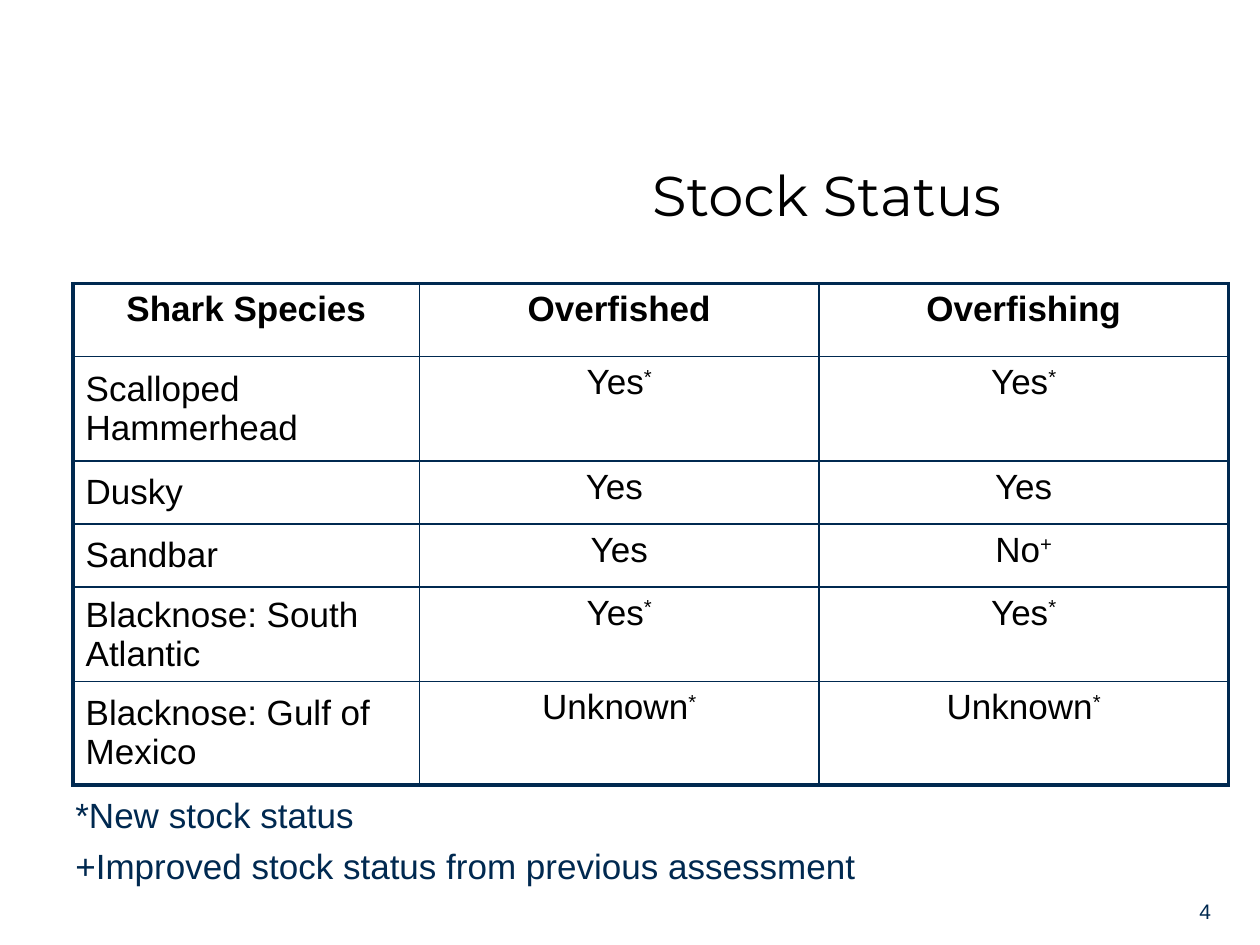
import dataclasses
import lxml.etree
import pptx
import pptx.dml.color
import pptx.enum.text
import pptx.oxml.ns
import pptx.util

Inches, Pt = pptx.util.Inches, pptx.util.Pt
Align, Anchor = pptx.enum.text.PP_ALIGN, pptx.enum.text.MSO_ANCHOR
qn = pptx.oxml.ns.qn


@dataclasses.dataclass(frozen=True)
class Theme:
    ink: str = "000000"
    navy: str = "002950"
    head: str = "Montserrat"
    body: str = "Arial"
    big: int = 32
    base: int = 20
    small: int = 12
    thick: float = 2.25
    thin: float = 1
    gap: int = 5


THEME = Theme()
COLS = [2.75, 3.17, 3.25]
HEIGHTS = [0.58, 0.83, 0.5, 0.5, 0.75, 0.82]
MARKS = "*+"
ROWS = [
    ["Shark Species", "Overfished", "Overfishing"],
    ["Scalloped Hammerhead", "Yes*", "Yes*"],
    ["Dusky", "Yes ", "Yes"],
    ["Sandbar", "Yes", "No+"],
    ["Blacknose: South Atlantic", "Yes*", "Yes*"],
    ["Blacknose: Gulf of Mexico", "Unknown*", "Unknown*"],
]
NOTES = ["*New stock status", "+Improved stock status from previous assessment"]


def style(run, size, color, face=THEME.body, bold=False):
    font = run.font
    font.name, font.size, font.bold = face, Pt(size), bold
    font.color.rgb = pptx.dml.color.RGBColor.from_string(color)


def title(slide, box, text):
    shape = slide.shapes.title
    shape.left, shape.top, shape.width, shape.height = map(Inches, box)
    frame = shape.text_frame
    frame.text = text
    frame.vertical_anchor = Anchor.MIDDLE
    para = frame.paragraphs[0]
    para.alignment = Align.CENTER
    style(para.runs[0], THEME.big, THEME.ink, THEME.head)


def lines(slide, box, texts, size):
    frame = slide.shapes.add_textbox(*map(Inches, box)).text_frame
    frame.word_wrap = True
    frame.text = "\n".join(texts)
    for i, para in enumerate(frame.paragraphs):
        if i:
            para.space_before = Pt(THEME.gap)
        style(para.runs[0], size, THEME.navy)


def border(cell, sides):
    # Borders come before the fill in the cell properties
    props = cell._tc.get_or_add_tcPr()
    for i, (side, width) in enumerate(sides.items()):
        line = lxml.etree.Element(qn("a:ln" + side), w=str(Pt(width)))
        fill = lxml.etree.SubElement(line, qn("a:solidFill"))
        lxml.etree.SubElement(fill, qn("a:srgbClr"), val=THEME.navy)
        props.insert(i, line)


def fill(cell, text, head, name):
    cell.fill.background()
    cell.vertical_anchor = Anchor.MIDDLE if name else Anchor.TOP
    para = cell.text_frame.paragraphs[0]
    para.alignment = Align.LEFT if name else Align.CENTER
    word = text.rstrip(MARKS)
    para.text = word
    mark = text[len(word):]
    if mark:
        run = para.add_run()
        run.text = mark
        run.font._element.set("baseline", "30000")
    for run in para.runs:
        style(run, THEME.base, THEME.ink, bold=head)


def status(slide, box, rows):
    table = slide.shapes.add_table(len(rows), len(COLS), *map(Inches, box)).table
    table.first_row = table.horz_banding = False
    for col, width in zip(table.columns, COLS):
        col.width = Inches(width)
    for row, height in zip(table.rows, HEIGHTS):
        row.height = Inches(height)
    for r, row in enumerate(rows):
        for c, text in enumerate(row):
            cell = table.cell(r, c)
            fill(cell, text, head=r == 0, name=c == 0 and r > 0)
            # Thick lines around the table, thin ones inside
            edge = {"L": c == 0, "R": c == len(COLS) - 1,
                    "T": r == 0, "B": r == len(rows) - 1}
            border(cell, {side: THEME.thick if outer else THEME.thin
                          for side, outer in edge.items()})


def main():
    deck = pptx.Presentation()
    deck.slide_width, deck.slide_height = Inches(10), Inches(7.5)
    slide = deck.slides.add_slide(deck.slide_layouts[5])
    title(slide, (3.58, 1.08, 6.08, 0.92), "Stock Status ")
    status(slide, (0.58, 2.25, sum(COLS), sum(HEIGHTS)), ROWS)
    # Footnotes and page number
    lines(slide, (0.5, 6.25, 8.5, 0.84), NOTES, THEME.base)
    lines(slide, (9.42, 7.08, 0.83, 0.3), ["4"], THEME.small)
    deck.save("out.pptx")


if __name__ == "__main__":
    main()
